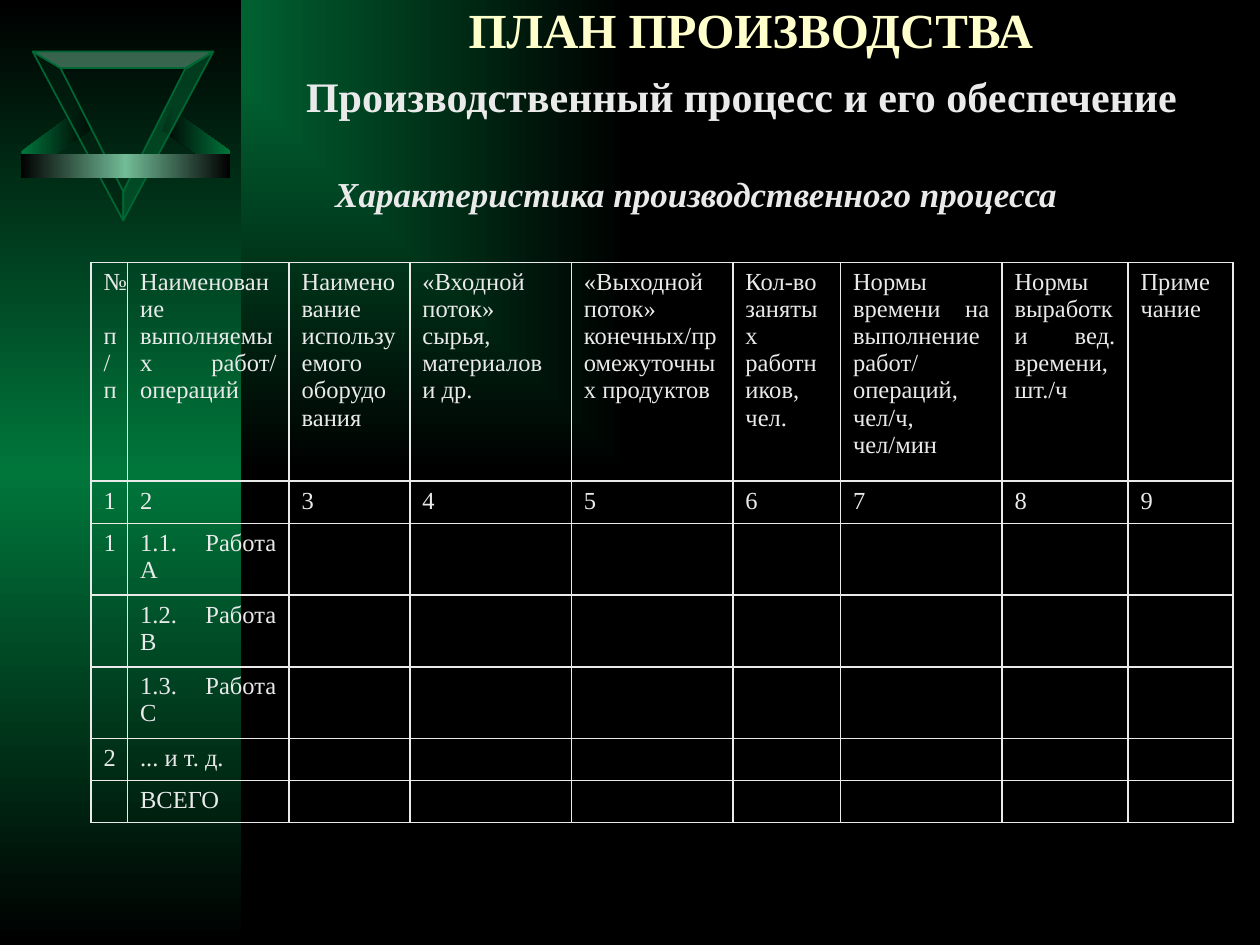
from lxml.etree import SubElement
from pptx import Presentation
from pptx.dml.color import RGBColor
from pptx.enum.shapes import MSO_SHAPE
from pptx.enum.text import MSO_ANCHOR, PP_ALIGN
from pptx.oxml import parse_xml
from pptx.oxml.ns import nsdecls, qn
from pptx.util import Pt

FONT = "Times New Roman"
COLORS = {
    "black": "000000",
    "green": "00763B",
    "mint": "71BB96",
    "edge": "006633",
    "shade": "002010",
    "title": "FFFFCC",
    "text": "EAEAEA",
}


def paint_gradient(fill, element, names, direction):
    """Spread the named colours evenly along a direction given as XML."""
    fill.gradient()
    gradient = element.find(".//" + qn("a:gradFill"))
    stops = "".join(
        f'<a:gs pos="{100000 * i // (len(names) - 1)}">'
        f'<a:srgbClr val="{COLORS[name]}"/></a:gs>'
        for i, name in enumerate(names)
    )
    gradient.getparent().replace(gradient, parse_xml(
        f'<a:gradFill rotWithShape="1" {nsdecls("a")}>'
        f"<a:gsLst>{stops}</a:gsLst>{direction}</a:gradFill>"
    ))


def write(para, text, size=14, color="text", bold=False, italic=False,
          align=PP_ALIGN.JUSTIFY, hanging=0):
    para.alignment = align
    if hanging:
        properties = para._p.get_or_add_pPr()
        properties.set("marL", str(Pt(hanging)))
        properties.set("indent", str(-Pt(hanging)))
    if not text:
        SubElement(para._p, qn("a:endParaRPr"), sz=str(size * 100))
        return
    span = para.add_run()
    span.text = text
    span.font.name = FONT
    span.font.size = Pt(size)
    span.font.bold = bold
    span.font.italic = italic
    span.font.color.rgb = RGBColor.from_string(COLORS[color])


deck = Presentation()
deck.slide_width, deck.slide_height = Pt(720), Pt(540)
page = deck.slides.add_slide(deck.slide_layouts[6])

ACROSS = '<a:lin ang="0" scaled="1"/>'
DOWN = '<a:lin ang="5400000" scaled="1"/>'
FROM_CORNER = '<a:path path="rect"><a:fillToRect r="100000" b="100000"/></a:path>'
paint_gradient(page.background.fill, page.element, ["green", "black"], FROM_CORNER)

# Side band
band = page.shapes.add_shape(MSO_SHAPE.RECTANGLE, 0, 0, Pt(138), Pt(540))
band.shadow.inherit = False
band.line.fill.background()
paint_gradient(band.fill, band._element, ["black", "green", "black"], DOWN)

# Triangle emblem: two mirrored wings, three translucent faces and a bar
right_wing = [(131.8, 86.4), (131.8, 101.5), (92.2, 74.2), (92.2, 75.6), (97.9, 61.9)]
left_wing = [(144 - x, y) for x, y in right_wing]
emblem = [
    (right_wing, ["black", "green"]),
    (left_wing, ["green", "black"]),
    ([(70.4, 126), (70.4, 109.4), (34.6, 38.9), (18.7, 29.5)], "shade"),
    ([(18.7, 29.5), (34.6, 38.9), (107, 38.9), (121.9, 29.5)], "mint"),
    ([(70.4, 126), (70.4, 109.4), (106, 38.9), (121.9, 29.5)], "edge"),
]
for points, paint in emblem:
    corners = [(Pt(x), Pt(y)) for x, y in points]
    builder = page.shapes.build_freeform(*corners[0], scale=1.0)
    builder.add_line_segments(corners[1:], close=True)
    piece = builder.convert_to_shape()
    piece.shadow.inherit = False
    if isinstance(paint, list):
        piece.line.fill.background()
        paint_gradient(piece.fill, piece._element, paint, ACROSS)
    else:
        piece.fill.solid()
        piece.fill.fore_color.rgb = RGBColor.from_string(COLORS[paint])
        tint = piece._element.spPr.find(".//" + qn("a:srgbClr"))
        SubElement(tint, qn("a:alpha"), val="50000")
        piece.line.color.rgb = RGBColor.from_string(COLORS["edge"])
        piece.line.width = Pt(1)

bar = page.shapes.add_shape(MSO_SHAPE.RECTANGLE, Pt(12), Pt(88), Pt(119.5), Pt(13.7))
bar.shadow.inherit = False
bar.line.fill.background()
paint_gradient(bar.fill, bar._element, ["black", "mint", "black"], ACROSS)

# Headings
headings = [
    ((150, 0, 558, 64), "ПЛАН ПРОИЗВОДСТВА",
     dict(size=28, color="title", align=PP_ALIGN.CENTER)),
    ((167.8, 36.7, 525, 36), "Производственный процесс и его обеспечение",
     dict(size=24, align=PP_ALIGN.LEFT)),
    ((154.8, 95, 491, 31), "Характеристика производственного процесса ",
     dict(size=20, italic=True, align=PP_ALIGN.CENTER)),
]
for place, text, style in headings:
    box = page.shapes.add_textbox(*[Pt(length) for length in place])
    frame = box.text_frame
    frame.word_wrap = True
    frame.vertical_anchor = MSO_ANCHOR.TOP
    if place[1] == 0:
        frame.margin_top = 0
    write(frame.paragraphs[0], text, bold=True, **style)

# Process table
widths = [20.9, 92.3, 69, 92.3, 92.3, 61.5, 92.3, 72, 60]
heights = [125, 24, 41, 41, 41, 24, 24]
rows = [
    ["№ п/п", "Наименование выполняемых работ/ операций",
     "Наименование используемого оборудования",
     "«Входной поток» сырья, материалов и др.",
     "«Выходной поток» конечных/промежуточных продуктов",
     "Кол-во занятых работников, чел.",
     "Нормы времени на выполнение работ/ операций, чел/ч, чел/мин",
     "Нормы выработки вед. времени, шт./ч", "Примечание"],
    [str(number) for number in range(1, 10)],
    ["1", "1.1. Работа А"],
    ["", "1.2. Работа В"],
    ["", "1.3. Работа С"],
    ["2", "... и т. д."],
    ["", "ВСЕГО"],
]
table = page.shapes.add_table(len(rows), len(widths), Pt(52), Pt(150),
                              Pt(sum(widths)), Pt(sum(heights))).table
table.first_row = table.horz_banding = False
for column, width in zip(table.columns, widths):
    column.width = Pt(width)
for row, height in zip(table.rows, heights):
    row.height = Pt(height)

for r, texts in enumerate(rows):
    for c in range(len(widths)):
        text = texts[c] if c < len(texts) else ""
        cell = table.cell(r, c)
        cell.fill.background()
        for i, side in enumerate(["lnL", "lnR", "lnT", "lnB"]):
            cell._tc.get_or_add_tcPr().insert(i, parse_xml(
                f'<a:{side} w="{Pt(1)}" {nsdecls("a")}><a:solidFill>'
                f'<a:srgbClr val="{COLORS["text"]}"/></a:solidFill></a:{side}>'
            ))
        hangs = text.isdigit() or text == "ВСЕГО"
        write(cell.text_frame.paragraphs[0], text, hanging=27 if hangs else 0)

deck.save("out.pptx")
